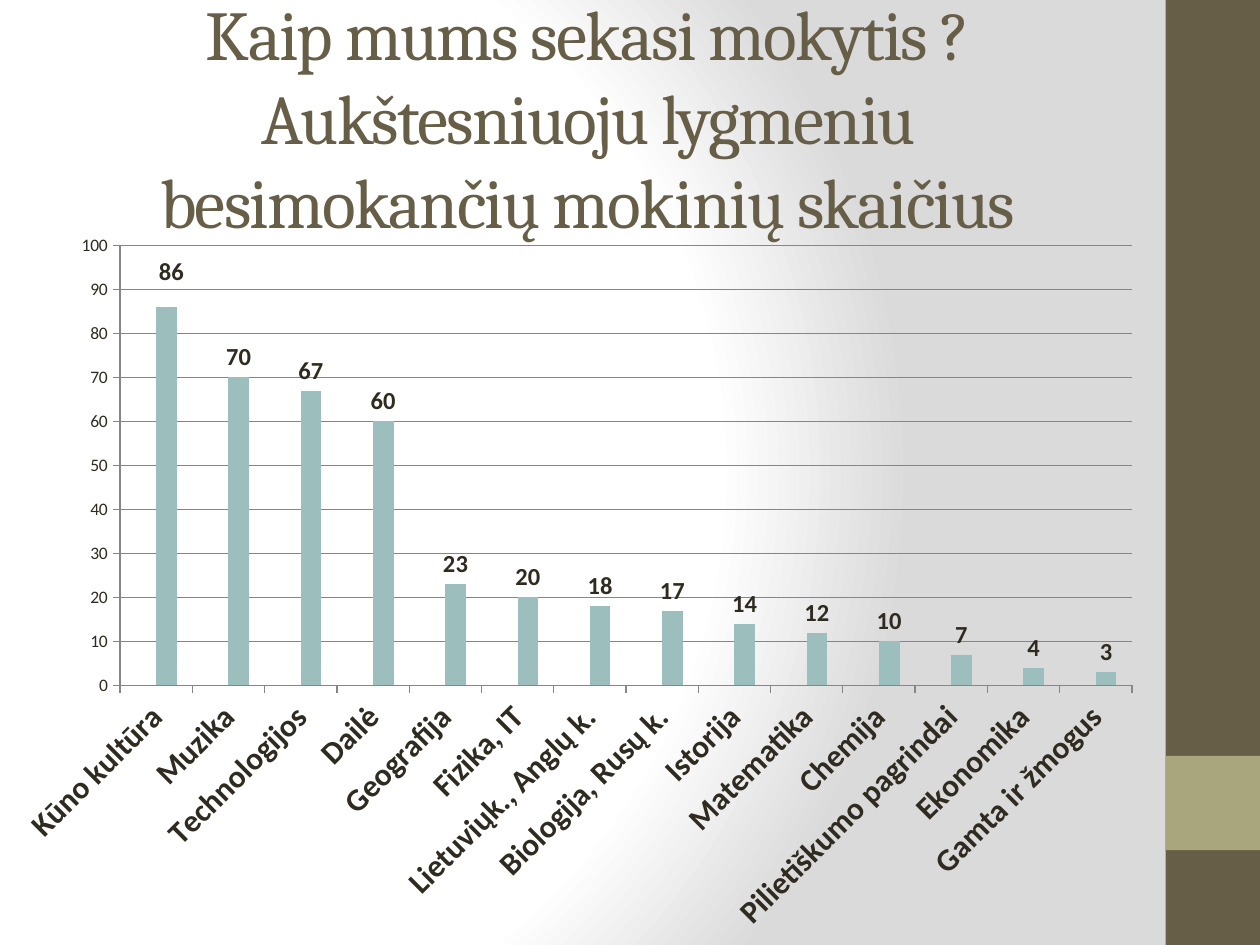
from pptx import Presentation
from pptx.chart.data import CategoryChartData as Data
from pptx.dml.color import RGBColor as Rgb
from pptx.enum.chart import XL_CHART_TYPE as Kind, XL_LABEL_POSITION as Spot
from pptx.enum.chart import XL_TICK_MARK as Tick
from pptx.enum.shapes import MSO_SHAPE as Form
from pptx.enum.text import MSO_ANCHOR as Anchor, PP_ALIGN as Align
from pptx.oxml import parse_xml
from pptx.oxml.ns import nsdecls, qn
from pptx.util import Cm, Pt

WIDE, HIGH = 25.4, 19.05
HUES = {"brown": "675E47", "olive": "A9A57C", "teal": "9CBEBD",
        "ink": "2F2B20", "line": "868686", "white": "FFFFFF", "grey": "DADADA"}
COUNTS = {
    "Kūno kultūra": 86, "Muzika": 70, "Technologijos": 67, "Dailė": 60,
    "Geografija": 23, "Fizika, IT": 20, "Lietuviųk., Anglų k.": 18,
    "Biologija, Rusų k.": 17, "Istorija": 14, "Matematika": 12, "Chemija": 10,
    "Pilietiškumo pagrindai": 7, "Ekonomika": 4, "Gamta ir žmogus": 3,
}
NO_LEADERS = (
    f'<c:extLst {nsdecls("c")}><c:ext uri="{{CE6537A1-D6FC-4f65-9D91-7224C49458BB}}" '
    'xmlns:c15="http://schemas.microsoft.com/office/drawing/2012/chart">'
    '<c15:showLeaderLines val="0"/></c:ext></c:extLst>')


def hue(name):
    return Rgb.from_string(HUES[name])


def adorn(item, form):
    for key, value in form.items():
        setattr(item, key, value)


def layout(**marks):
    inner = "".join(f'<c:{key} val="{value}"/>' for key, value in marks.items())
    return parse_xml(f'<c:layout {nsdecls("c")}><c:manualLayout>{inner}'
                     '</c:manualLayout></c:layout>')


class Deck:
    def __init__(self):
        self.show = Presentation()
        adorn(self.show, {"slide_width": Cm(WIDE), "slide_height": Cm(HIGH)})
        self.slide = self.show.slides.add_slide(self.show.slide_layouts[5])

    def glow(self, stops):
        """Circular background gradient."""
        fill = self.slide.background.fill
        fill.gradient()
        grad = self.slide.background._cSld.find(".//" + qn("a:gradFill"))
        marks = "".join(f'<a:gs pos="{spot * 1000}"><a:srgbClr val="{HUES[name]}"/></a:gs>'
                        for spot, name in stops)
        fresh = parse_xml(
            f'<a:gradFill {nsdecls("a")} rotWithShape="1"><a:gsLst>{marks}</a:gsLst>'
            '<a:path path="circle"><a:fillToRect l="20000" t="50000" r="100000" b="50000"/>'
            '</a:path></a:gradFill>')
        grad.getparent().replace(grad, fresh)

    def block(self, left, top, width, height, name):
        box = self.slide.shapes.add_shape(
            Form.RECTANGLE, Cm(left), Cm(top), Cm(width), Cm(height))
        box.shadow.inherit = False
        box.fill.solid()
        box.fill.fore_color.rgb = hue(name)
        box.line.fill.background()

    def title(self, text, left, top, width, height):
        box = self.slide.shapes.title
        adorn(box, {"left": Cm(left), "top": Cm(top),
                    "width": Cm(width), "height": Cm(height)})
        frame = box.text_frame
        frame.text = text
        adorn(frame, {"word_wrap": True, "vertical_anchor": Anchor.MIDDLE})
        para = frame.paragraphs[0]
        para.alignment = Align.CENTER
        for run in para.runs:
            adorn(run.font, {"name": "Cambria", "size": Pt(40)})
            run.font.color.rgb = hue("brown")
            run.font._element.set("spc", "-100")

    def columns(self, counts, left, top, width, height):
        data = Data()
        data.categories = list(counts)
        data.add_series("Series 1", [None] * len(counts))
        data.add_series("Series 2", list(counts.values()))
        chart = self.slide.shapes.add_chart(
            Kind.COLUMN_CLUSTERED, Cm(left), Cm(top), Cm(width), Cm(height), data).chart
        adorn(chart, {"has_legend": False, "has_title": False})
        adorn(chart.font, {"name": "Calibri", "size": Pt(10)})
        chart.font.color.rgb = hue("ink")

        # Columns
        plot = chart.plots[0]
        adorn(plot, {"gap_width": 150, "overlap": 0, "vary_by_categories": False})
        for series, name in zip(plot.series, ("olive", "teal")):
            series.format.fill.solid()
            series.format.fill.fore_color.rgb = hue(name)

        # Value labels, the first one nudged clear of its column
        bars = plot.series[1]
        first = bars.points[0].data_label
        adorn(bars.data_labels, {"show_value": True, "position": Spot.OUTSIDE_END})
        first.position = Spot.OUTSIDE_END
        for label in (bars.data_labels, first):
            adorn(label.font, {"name": "Calibri", "size": Pt(14), "bold": True})
            label.font.color.rgb = hue("ink")
        labels = bars._element.find(qn("c:dLbls"))
        labels.find(qn("c:dLbl")).insert(1, layout(x=0.1 / width, y=-0.3 / height))
        for lead in labels.findall(qn("c:showLeaderLines")):
            lead.set("val", "0")
        labels.append(parse_xml(NO_LEADERS))

        # Axes
        names, values = chart.category_axis, chart.value_axis
        adorn(values, {"minimum_scale": 0, "maximum_scale": 100, "major_unit": 10,
                       "has_major_gridlines": True})
        for axis in (names, values):
            adorn(axis, {"major_tick_mark": Tick.OUTSIDE, "minor_tick_mark": Tick.NONE})
        for part in (names, values, values.major_gridlines):
            part.format.line.width = Pt(0.75)
            part.format.line.color.rgb = hue("line")
        font = names.tick_labels.font
        adorn(font, {"name": "Calibri", "size": Pt(18), "bold": True})
        font.color.rgb = hue("ink")
        names._element.find(".//" + qn("a:bodyPr")).set("rot", "-2700000")

        # Plot area, in shares of the chart's size
        area = chart._chartSpace.find(".//" + qn("c:plotArea"))
        for old in area.findall(qn("c:layout")):
            area.remove(old)
        area.insert(0, layout(layoutTarget="inner", xMode="edge", yMode="edge",
                              x=2.42 / width, y=0.5 / height,
                              w=20.4 / width, h=8.87 / height))


def main():
    deck = Deck()
    # Background and side band
    deck.glow([(0, "white"), (75, "white"), (100, "grey")])
    deck.block(23.5, 0, 1.9, HIGH, "brown")
    deck.block(23.5, 15.24, 1.9, 1.9, "olive")
    # Title and chart
    deck.title("Kaip mums sekasi mokytis ?\vAukštesniuoju lygmeniu "
               "besimokančių mokinių skaičius", 1.27, 0.76, 21.16, 3.18)
    deck.columns(COUNTS, 0, 4.45, 23.29, 14.6)
    deck.show.save("out.pptx")


if __name__ == "__main__":
    main()
